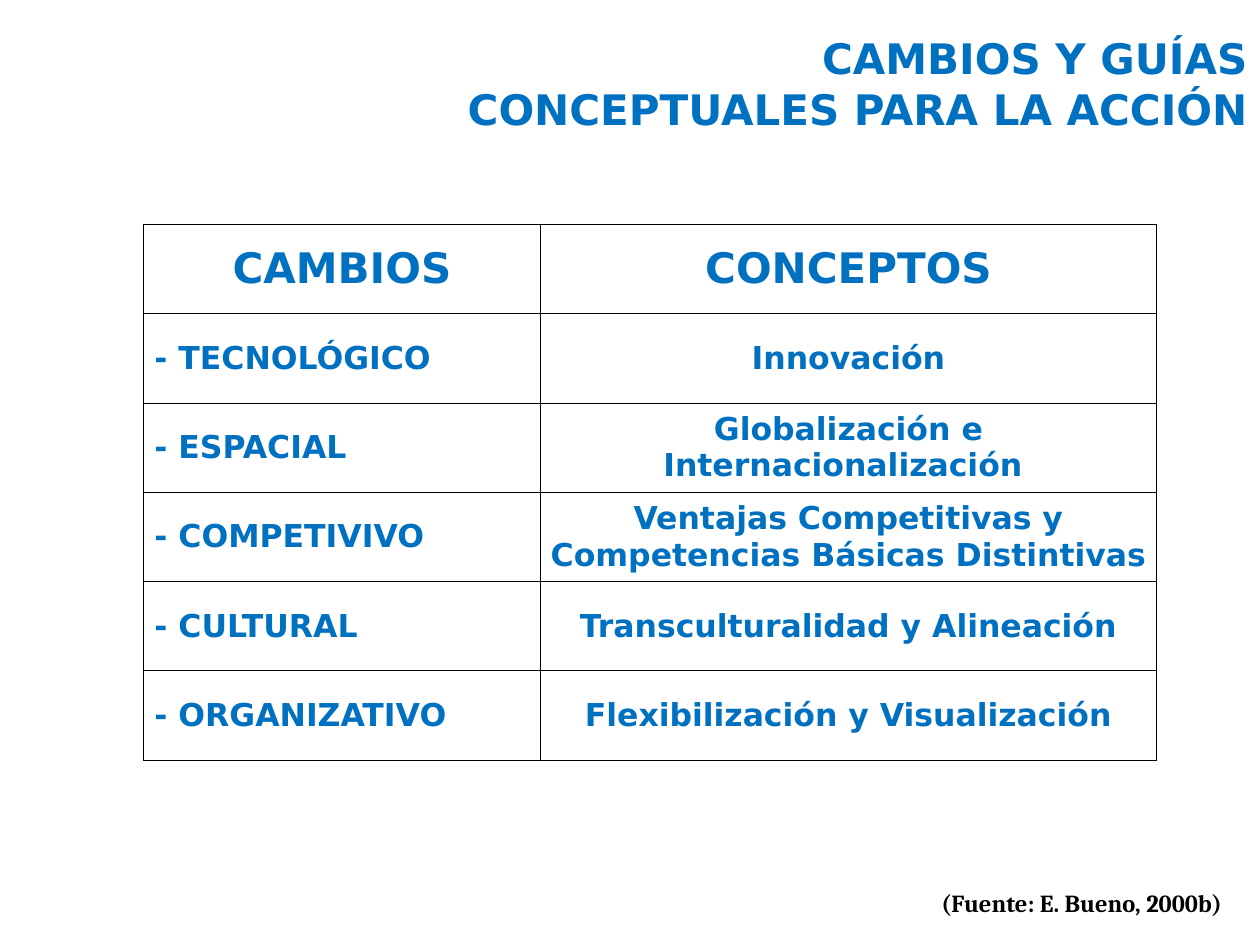
from lxml.etree import SubElement
from pptx import Presentation
from pptx.dml.color import RGBColor
from pptx.enum.text import MSO_ANCHOR, MSO_AUTO_SIZE, PP_ALIGN
from pptx.oxml.ns import qn
from pptx.util import Pt

COLORS = {"blue": "0070C0", "black": "000000"}
ROWS = [
    ("CAMBIOS", "CONCEPTOS"),
    ("- TECNOLÓGICO", "Innovación"),
    ("- ESPACIAL", "Globalización e Internacionalización "),
    ("- COMPETIVIVO", "Ventajas Competitivas y Competencias Básicas Distintivas"),
    ("- CULTURAL", "Transculturalidad y Alineación"),
    ("- ORGANIZATIVO", "Flexibilización y Visualización"),
]
COLUMN_WIDTHS = [226.8, 352.08]
ROW_HEIGHT = 51.05


def add_text(text_frame, text, size, alignment, font="DejaVu Sans", color="blue"):
    paragraph = text_frame.paragraphs[0]
    paragraph.alignment = alignment
    run = paragraph.add_run()
    run.text = text
    run.font.name = font
    run.font.size = Pt(size)
    run.font.bold = True
    run.font.color.rgb = RGBColor.from_string(COLORS[color])


def add_borders(cell):
    properties = cell._tc.get_or_add_tcPr()
    for position, side in enumerate(("a:lnL", "a:lnR", "a:lnT", "a:lnB")):
        line = properties.makeelement(qn(side), {"w": str(Pt(0.5))})
        fill = SubElement(line, qn("a:solidFill"))
        SubElement(fill, qn("a:srgbClr"), val=COLORS["black"])
        properties.insert(position, line)


presentation = Presentation()
presentation.slide_width = Pt(720)
presentation.slide_height = Pt(540)
slide = presentation.slides.add_slide(presentation.slide_layouts[5])

source = slide.shapes.add_textbox(Pt(468), Pt(504), Pt(237.6), Pt(24))
source.text_frame.word_wrap = True
add_text(source.text_frame, "(Fuente: E. Bueno, 2000b)", 14, PP_ALIGN.RIGHT, "Cambria", "black")

title = slide.shapes.title
title.left, title.top, title.width, title.height = Pt(247), Pt(15.1), Pt(473), Pt(94.3)
title.text_frame.word_wrap = True
title.text_frame.auto_size = MSO_AUTO_SIZE.NONE
title.text_frame.vertical_anchor = MSO_ANCHOR.TOP
add_text(title.text_frame, "CAMBIOS Y GUÍAS CONCEPTUALES PARA LA ACCIÓN", 24, PP_ALIGN.RIGHT)

table = slide.shapes.add_table(
    len(ROWS), len(COLUMN_WIDTHS), Pt(82), Pt(128.2),
    Pt(sum(COLUMN_WIDTHS)), Pt(ROW_HEIGHT * len(ROWS)),
).table
table.horz_banding = False
for column, width in zip(table.columns, COLUMN_WIDTHS):
    column.width = Pt(width)

for row_index, texts in enumerate(ROWS):
    table.rows[row_index].height = Pt(ROW_HEIGHT)
    for column_index, text in enumerate(texts):
        cell = table.cell(row_index, column_index)
        is_header = row_index == 0
        is_label = column_index == 0 and not is_header
        cell.fill.background()
        cell.vertical_anchor = MSO_ANCHOR.MIDDLE
        cell.margin_left = Pt(6.25 if is_label else 0)
        cell.margin_right = cell.margin_top = cell.margin_bottom = Pt(0)
        add_borders(cell)
        alignment = PP_ALIGN.LEFT if is_label else PP_ALIGN.CENTER
        add_text(cell.text_frame, text, 24 if is_header else 18, alignment)

presentation.save("out.pptx")
